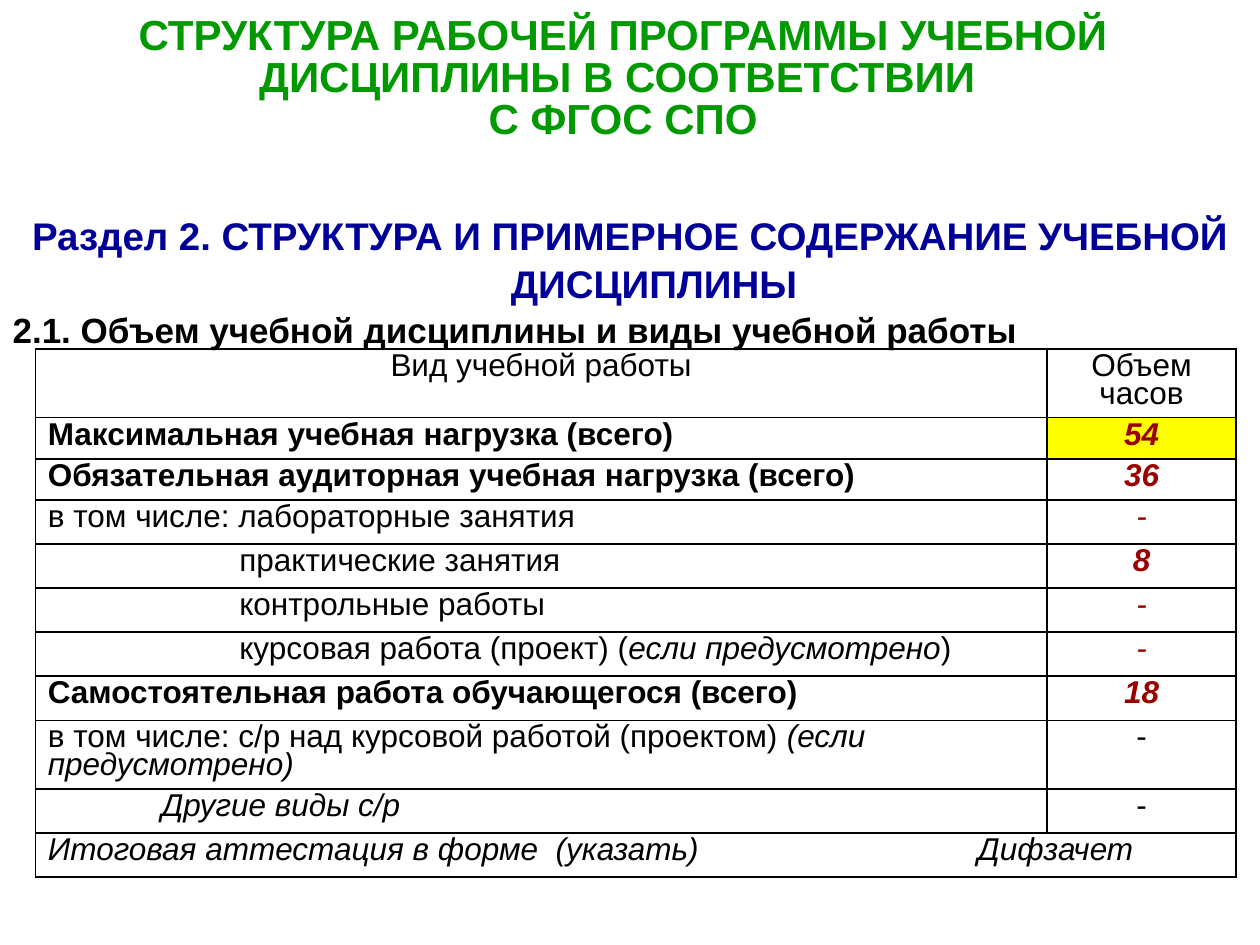
from lxml import etree
from pptx import Presentation, util as u
from pptx.dml.color import RGBColor
from pptx.enum import text
from pptx.oxml.ns import qn

COLORS = {"title": "009900", "section": "000099", "text": "000000",
          "hours": "990000", "mark": "FFFF00"}
FONT = "Arial"
LEFT, CENTER, JUSTIFY = (text.PP_ALIGN.LEFT, text.PP_ALIGN.CENTER,
                         text.PP_ALIGN.JUSTIFY)

TITLE = ("СТРУКТУРА РАБОЧЕЙ ПРОГРАММЫ УЧЕБНОЙ ДИСЦИПЛИНЫ В СООТВЕТСТВИИ \v"
         "С ФГОС СПО")
BODY = [  # text, size, colour, alignment
    ("Раздел 2. СТРУКТУРА И ПРИМЕРНОЕ СОДЕРЖАНИЕ УЧЕБНОЙ ДИСЦИПЛИНЫ",
     22, "section", CENTER),
    ("2.1. Объем учебной дисциплины и виды учебной работы", 20, "text", JUSTIFY),
]
HEADER = ("Вид учебной работы", "Объем часов")
# runs of (text, style), left indent, hours, hours style, hours colour, row height
ROWS = [
    ([("Максимальная учебная нагрузка (всего)", "b")], 0, "54", "bi", "hours", 0.33),
    ([("Обязательная аудиторная учебная нагрузка (всего)", "b")],
     0, "36", "bi", "hours", 0.32),
    ([("в том числе: лабораторные занятия", "")], 0, "-", "i", "hours", 0.35),
    ([("практические занятия", "")], 1.52, "8", "bi", "hours", 0.35),
    ([("контрольные работы", "")], 1.52, "-", "i", "hours", 0.35),
    ([("курсовая работа (проект) (", ""), ("если предусмотрено", "i"), (")", "")],
     1.52, "-", "i", "hours", 0.35),
    ([("Самостоятельная работа обучающегося (всего)", "b")],
     0, "18", "bi", "hours", 0.35),
    ([("в том числе: с/р над курсовой работой (проектом) ", ""),
      ("(если предусмотрено)", "i")], 0, "-", "", "text", 0.54),
    ([("Другие виды с/р", "i")], 0.9, "-", "", "text", 0.35),
]
FOOTER = "Итоговая аттестация в форме  (указать)\tДифзачет"
FOOTER_TAB = 7.38
COLS = (8.03, 1.5)
HEIGHTS = [0.54] + [row[-1] for row in ROWS] + [0.35]


def rgb(name):
    return RGBColor.from_string(COLORS[name])


def set_font(font, size, color, bold=None):
    font.name, font.size, font.bold = FONT, u.Pt(size), bold
    font.color.rgb = rgb(color)


def place(sp, left, top, width, height):
    sp.left, sp.top = u.Inches(left), u.Inches(top)
    sp.width, sp.height = u.Inches(width), u.Inches(height)
    sp.text_frame.auto_size = text.MSO_AUTO_SIZE.NONE


def add_borders(cell):
    tcPr = cell._tc.get_or_add_tcPr()
    for side in ("lnL", "lnR", "lnT", "lnB"):
        ln = etree.SubElement(tcPr, qn("a:" + side), w=str(u.Pt(1)))
        fill = etree.SubElement(ln, qn("a:solidFill"))
        etree.SubElement(fill, qn("a:srgbClr"), val=COLORS["text"])


def fill_cell(cell, runs, align=LEFT, color="text", indent=0):
    p = cell.text_frame.paragraphs[0]
    p.alignment, p.line_spacing = align, u.Pt(16)
    set_font(p.font, 18, color)
    for words, style in runs:
        r = p.add_run()
        r.text = words
        set_font(r.font, 18, color, "b" in style)
        r.font.italic = "i" in style
    if indent:
        p._p.get_or_add_pPr().set("marL", str(u.Inches(indent)))
    return p


def add_heading(s):
    sp = s.shapes.title
    place(sp, 0.28, 0, 9.33, 1.27)
    tf = sp.text_frame
    tf.vertical_anchor = text.MSO_ANCHOR.MIDDLE
    tf.text = TITLE
    p = tf.paragraphs[0]
    p.alignment, p.line_spacing = CENTER, u.Pt(24)
    set_font(p.font, 24, "title", True)


def add_body(s):
    sp = s.placeholders[1]
    place(sp, 0, 1.62, 10, 5.67)
    tf = sp.text_frame
    tf.text = "\n".join(item[0] for item in BODY)
    for p, (_, size, color, align) in zip(tf.paragraphs, BODY):
        p.alignment, p.line_spacing = align, 1.04
        p.space_before = u.Pt(0)
        set_font(p.font, size, color, True)
        pPr = p._p.get_or_add_pPr()
        pPr.set("marL", str(u.Inches(0.38)))
        pPr.set("indent", str(u.Inches(-0.38)))
        bullet = etree.Element(qn("a:buNone"))
        pPr.find(qn("a:defRPr")).addprevious(bullet)


def add_hours_table(s):
    table = s.shapes.add_table(
        len(HEIGHTS), len(COLS), u.Inches(0.28), u.Inches(2.77),
        u.Inches(sum(COLS)), u.Inches(sum(HEIGHTS))).table
    table.first_row = table.horz_banding = False
    for col, width in zip(table.columns, COLS):
        col.width = u.Inches(width)
    for row, height in zip(table.rows, HEIGHTS):
        row.height = u.Inches(height)
    for cell in table.iter_cells():
        add_borders(cell)
        cell.fill.background()

    for i, label in enumerate(HEADER):
        fill_cell(table.cell(0, i), [(label, "")], CENTER)
    for i, (runs, indent, hours, style, color, _) in enumerate(ROWS, 1):
        fill_cell(table.cell(i, 0), runs, indent=indent)
        fill_cell(table.cell(i, 1), [(hours, style)], CENTER, color)
    mark = table.cell(1, 1).fill
    mark.solid()
    mark.fore_color.rgb = rgb("mark")

    last = len(HEIGHTS) - 1
    table.cell(last, 0).merge(table.cell(last, 1))
    p = fill_cell(table.cell(last, 0), [(FOOTER, "i")])
    tabs = etree.Element(qn("a:tabLst"))
    etree.SubElement(tabs, qn("a:tab"), pos=str(u.Inches(FOOTER_TAB)), algn="l")
    p._p.pPr.find(qn("a:defRPr")).addprevious(tabs)


def main():
    prs = Presentation()
    prs.slide_width, prs.slide_height = u.Inches(10), u.Inches(7.5)
    s = prs.slides.add_slide(prs.slide_layouts[1])
    add_heading(s)
    add_body(s)
    add_hours_table(s)
    prs.save("out.pptx")


if __name__ == "__main__":
    main()
